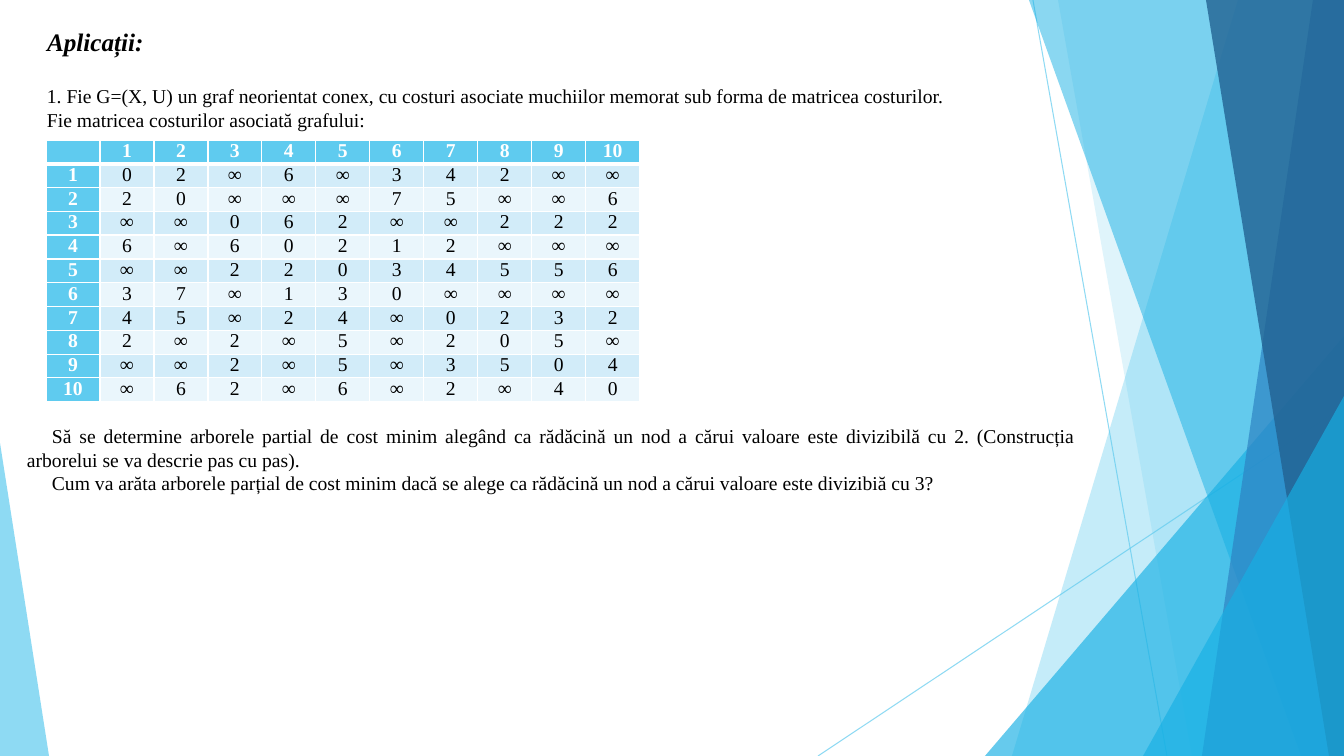
from lxml.etree import SubElement
from pptx import Presentation
from pptx.dml.color import RGBColor
from pptx.enum.shapes import MSO_CONNECTOR, MSO_SHAPE
from pptx.enum.text import MSO_ANCHOR, MSO_AUTO_SIZE, PP_ALIGN
from pptx.oxml import parse_xml
from pptx.oxml.ns import nsdecls, qn
from pptx.util import Pt

EMU_PER_PX = 914400 / 100.8
WIDTH, HEIGHT = 1344, 756
FONT = "Times New Roman"
BLACK, WHITE = "000000", "FFFFFF"
SKY, CYAN, BLUE, NAVY = "5FCBEF", "17B0E4", "2E83C3", "226292"
BANDS = ("D2ECF9", "EAF6FC")

HEADING = "Aplicații:"
INTRO = [
    "1. Fie G=(X, U) un graf neorientat conex, cu costuri asociate muchiilor memorat sub forma de matricea costurilor.",
    "Fie matricea costurilor asociată grafului:",
]
COSTS = [
    "0 2 ∞ 6 ∞ 3 4 2 ∞ ∞",
    "2 0 ∞ ∞ ∞ 7 5 ∞ ∞ 6",
    "∞ ∞ 0 6 2 ∞ ∞ 2 2 2",
    "6 ∞ 6 0 2 1 2 ∞ ∞ ∞",
    "∞ ∞ 2 2 0 3 4 5 5 6",
    "3 7 ∞ 1 3 0 ∞ ∞ ∞ ∞",
    "4 5 ∞ 2 4 ∞ 0 2 3 2",
    "2 ∞ 2 ∞ 5 ∞ 2 0 5 ∞",
    "∞ ∞ 2 ∞ 5 ∞ 3 5 0 4",
    "∞ 6 2 ∞ 6 ∞ 2 ∞ 4 0",
]
QUESTIONS = [
    "Să se determine arborele partial de cost minim alegând ca rădăcină un nod a cărui valoare este divizibilă cu 2. (Construcția arborelui se va descrie pas cu pas).",
    "Cum va arăta arborele parțial de cost minim dacă se alege ca rădăcină un nod a cărui valoare este divizibiă cu 3?",
]

RAYS = [(1033, 0, 1167, HEIGHT), (WIDTH, 406, 818, HEIGHT)]
FACETS = [
    ("band", (1238, 1012), SKY, 36),
    ("band", (1058, 1192), SKY, 20),
    ("triangle", (985, 336, 359, 420, 1), CYAN, 66),
    ("band", (1029, 1301), CYAN, 50),
    ("band", (1313, 1202), BLUE, 70),
    ("band", (1206, 1329), NAVY, 80),
    ("triangle", (1143, 396, 201, 360, 1), CYAN, 66),
    ("triangle", (0, 443, 49, 313, 0), SKY, 70),
]
TABLE_LEFT, TABLE_TOP, COLUMN_WIDTH, TABLE_HEIGHT = 46, 140, 54, 259


def px(*lengths):
    return [round(length * EMU_PER_PX) for length in lengths]


def color(hex_code):
    return RGBColor.from_string(hex_code)


def set_opacity(part, percent):
    for srgb in part.element.spPr.iter(qn("a:srgbClr")):
        SubElement(srgb, qn("a:alpha"), val=str(percent * 1000))


def style(paragraph, size=14, ink=BLACK, bold=False, italic=False, align=PP_ALIGN.LEFT):
    paragraph.alignment = align
    font = paragraph.font
    font.name, font.size, font.bold, font.italic = FONT, Pt(size), bold, italic
    font.color.rgb = color(ink)


def write(frame, lines, **look):
    frame.word_wrap = True
    frame.vertical_anchor = MSO_ANCHOR.TOP
    frame.text = "\n".join(lines)
    for paragraph in frame.paragraphs:
        style(paragraph, **look)


def add_text(slide, box, lines, **look):
    frame = slide.shapes.add_textbox(*px(*box)).text_frame
    write(frame, lines, **look)
    frame.auto_size = MSO_AUTO_SIZE.SHAPE_TO_FIT_TEXT
    return frame


def add_ray(slide, ends):
    ray = slide.shapes.add_connector(MSO_CONNECTOR.STRAIGHT, *px(*ends))
    ray.line.color.rgb = color(SKY)
    ray.line.width = Pt(0.75)
    SubElement(ray.element.spPr, qn("a:effectLst"))
    set_opacity(ray, 70)


def add_facet(slide, kind, geometry, fill, opacity):
    if kind == "band":
        top_x, bottom_x = geometry
        outline = slide.shapes.build_freeform(top_x, 0, scale=EMU_PER_PX)
        outline.add_line_segments([(WIDTH, 0), (WIDTH, HEIGHT), (bottom_x, HEIGHT)])
        facet = outline.convert_to_shape()
    else:
        *box, apex = geometry
        facet = slide.shapes.add_shape(MSO_SHAPE.ISOSCELES_TRIANGLE, *px(*box))
        facet.adjustments[0] = apex
    facet.shadow.inherit = False
    facet.fill.solid()
    facet.fill.fore_color.rgb = color(fill)
    facet.line.fill.background()
    set_opacity(facet, opacity)


def set_borders(cell, row):
    points = {"L": 1, "R": 1, "T": 3 if row == 1 else 1, "B": 3 if row == 0 else 1}
    for position, (side, width) in enumerate(points.items()):
        border = parse_xml(
            f'<a:ln{side} {nsdecls("a")} w="{Pt(width)}"><a:solidFill>'
            f'<a:srgbClr val="{WHITE}"/></a:solidFill></a:ln{side}>'
        )
        cell._tc.get_or_add_tcPr().insert(position, border)


def add_cost_matrix(slide):
    nodes = [str(number + 1) for number in range(len(COSTS))]
    grid = [[""] + nodes] + [[node] + costs.split() for node, costs in zip(nodes, COSTS)]
    count = len(grid)
    box = px(TABLE_LEFT, TABLE_TOP, COLUMN_WIDTH * count, TABLE_HEIGHT)
    matrix = slide.shapes.add_table(count, count, *box).table
    matrix.first_col = True
    edges = [round(TABLE_HEIGHT * row / count) for row in range(count + 1)]
    for row, values in enumerate(grid):
        matrix.columns[row].width = px(COLUMN_WIDTH)[0]
        matrix.rows[row].height = px(edges[row + 1] - edges[row])[0]
        for column, value in enumerate(values):
            cell = matrix.cell(row, column)
            label = row == 0 or column == 0
            cell.margin_left, cell.margin_right, cell.margin_top, cell.margin_bottom = px(7, 7, 0, 0)
            cell.fill.solid()
            cell.fill.fore_color.rgb = color(SKY if label else BANDS[(row - 1) % 2])
            set_borders(cell, row)
            paragraph = cell.text_frame.paragraphs[0]
            paragraph.text = value
            style(paragraph, ink=WHITE if label else BLACK, bold=label, align=PP_ALIGN.CENTER)
            if not value:
                SubElement(paragraph._p, qn("a:endParaRPr"), sz="1400")


def main():
    deck = Presentation()
    deck.slide_width, deck.slide_height = px(WIDTH, HEIGHT)
    slide = deck.slides.add_slide(deck.slide_layouts[5])
    for ends in RAYS:
        add_ray(slide, ends)
    for facet in FACETS:
        add_facet(slide, *facet)
    title = slide.shapes.title
    title.left, title.top, title.width, title.height = px(37, 21, 982, 39)
    write(title.text_frame, [HEADING], size=18, bold=True, italic=True)
    title.text_frame.auto_size = MSO_AUTO_SIZE.NONE
    add_text(slide, (37, 79, 982, 57), INTRO)
    add_cost_matrix(slide)
    questions = add_text(slide, (17, 419, 1069, 82), QUESTIONS, align=PP_ALIGN.JUSTIFY)
    for question in questions.paragraphs:
        question._p.get_or_add_pPr().set("indent", str(px(25)[0]))
    deck.save("out.pptx")


if __name__ == "__main__":
    main()
